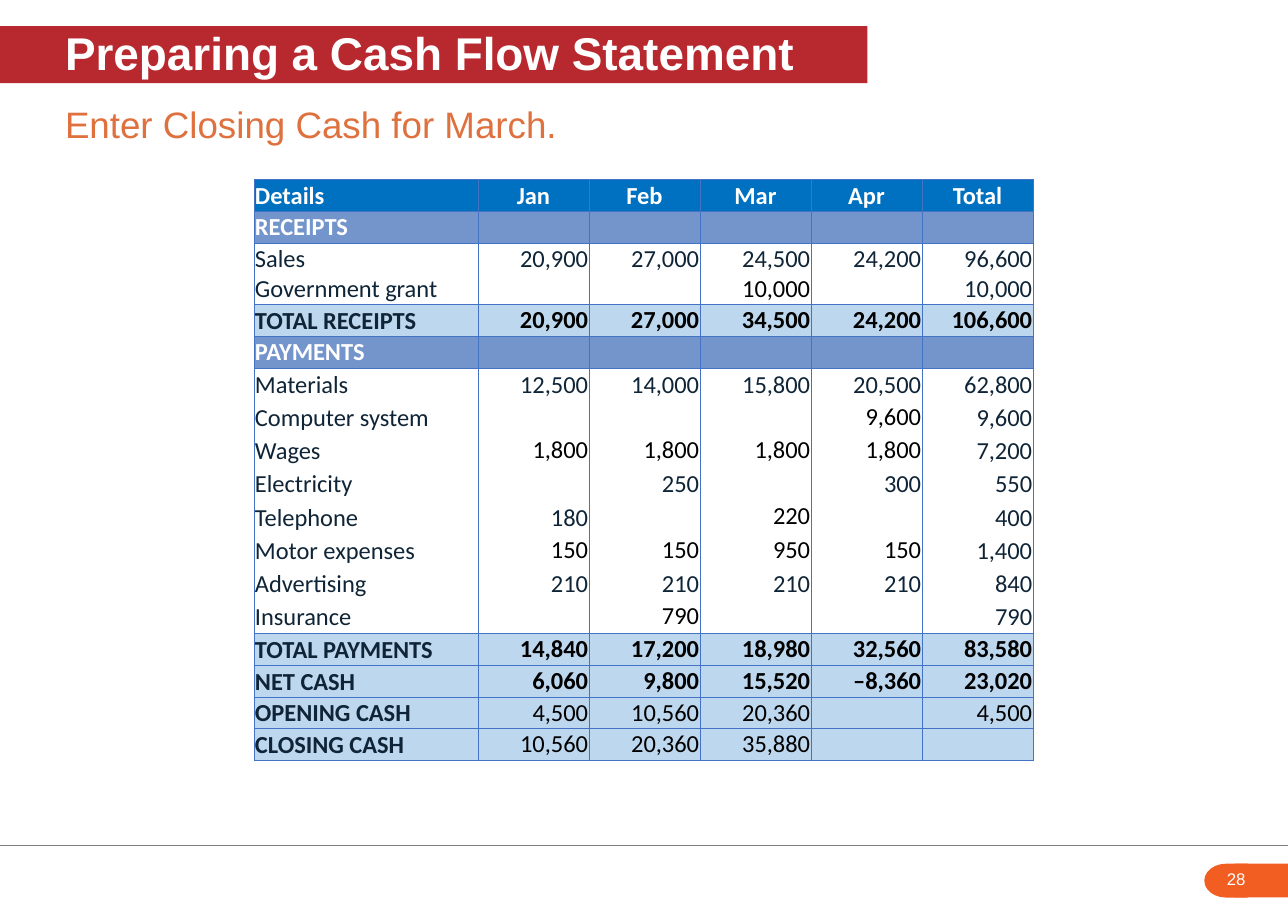
from lxml import etree
from pptx import Presentation
from pptx.dml.color import RGBColor
from pptx.enum.shapes import MSO_CONNECTOR, MSO_SHAPE
from pptx.enum.text import MSO_ANCHOR, MSO_AUTO_SIZE, PP_ALIGN
from pptx.oxml.ns import qn
from pptx.util import Cm, Pt

LEFT, CENTER, RIGHT = PP_ALIGN.LEFT, PP_ALIGN.CENTER, PP_ALIGN.RIGHT
TOP, MIDDLE = MSO_ANCHOR.TOP, MSO_ANCHOR.MIDDLE
STRAIGHT = MSO_CONNECTOR.STRAIGHT
RECTANGLE, DELAY = MSO_SHAPE.RECTANGLE, MSO_SHAPE.FLOWCHART_DELAY
NO_AUTOFIT = MSO_AUTO_SIZE.NONE

COLORS = {
    "white": "FFFFFF",
    "black": "000000",
    "navy": "0F2537",
    "red": "B8292F",
    "orange": "DF713E",
    "badge": "F25E22",
    "rule": "808080",
    "border": "4472C4",
    "header": "0070C0",
    "section": "7395CB",
    "total": "BDD7EE",
}
FILLS = {"header": "header", "section": "section", "receipt": "white",
         "payment": "white", "total": "total", "balance": "total"}
ROW_HEIGHTS = {"receipt": 0.71, "payment": 0.766}
ITEMS = ("receipt", "payment")
MONTHS = (1, 2, 3, 4)

# Each row: kind, label, values, columns whose figures are black and top-aligned
ROWS = [
    ("header", "Details", ["Jan", "Feb", "Mar", "Apr", "Total"], ()),
    ("section", "RECEIPTS", [""] * 5, ()),
    ("receipt", "Sales", ["20,900", "27,000", "24,500", "24,200", "96,600"], ()),
    ("receipt", "Government grant", ["", "", "10,000", "", "10,000"], (3,)),
    ("total", "TOTAL RECEIPTS", ["20,900", "27,000", "34,500", "24,200", "106,600"], ()),
    ("section", "PAYMENTS", [""] * 5, ()),
    ("payment", "Materials", ["12,500", "14,000", "15,800", "20,500", "62,800"], ()),
    ("payment", "Computer system", ["", "", "", "9,600", "9,600"], (4,)),
    ("payment", "Wages", ["1,800", "1,800", "1,800", "1,800", "7,200"], MONTHS),
    ("payment", "Electricity", ["", "250", "", "300", "550"], ()),
    ("payment", "Telephone", ["180", "", "220", "", "400"], (3,)),
    ("payment", "Motor expenses", ["150", "150", "950", "150", "1,400"], MONTHS),
    ("payment", "Advertising", ["210", "210", "210", "210", "840"], ()),
    ("payment", "Insurance", ["", "790", "", "", "790"], (2,)),
    ("total", "TOTAL PAYMENTS", ["14,840", "17,200", "18,980", "32,560", "83,580"], ()),
    ("total", "NET CASH", ["6,060", "9,800", "15,520", "–8,360", "23,020"], ()),
    ("balance", "OPENING CASH", ["4,500", "10,560", "20,360", "", "4,500"], ()),
    ("balance", "CLOSING CASH", ["10,560", "20,360", "35,880", "", ""], ()),
]


def color(name):
    """Return the named colour."""
    return RGBColor.from_string(COLORS[name])


def write(frame, text, size=16, font="Arial", fill="white", bold=False, align=LEFT):
    """Put one formatted paragraph in a text frame."""
    paragraph = frame.paragraphs[0]
    paragraph.alignment = align
    if not text:
        etree.SubElement(paragraph._p, qn("a:endParaRPr"), sz=str(size * 100))
        return
    run = paragraph.add_run()
    run.text = text
    run.font.size = Pt(size)
    run.font.name = font
    run.font.bold = bold
    run.font.color.rgb = color(fill)


def set_heading_frame(frame):
    """Give a heading its margins and middle anchor."""
    frame.auto_size = NO_AUTOFIT
    frame.word_wrap = True
    frame.vertical_anchor = MIDDLE
    frame.margin_left, frame.margin_top = Cm(1.5), 0
    frame.margin_right, frame.margin_bottom = 0, Cm(0.13)


def add_headings(slide, left, top, width):
    """Place the title band and the instruction below it."""
    title = slide.shapes.title
    title.left, title.top, title.width, title.height = left, top, Cm(20), Cm(1.32)
    title.fill.solid()
    title.fill.fore_color.rgb = color("red")
    set_heading_frame(title.text_frame)
    write(title.text_frame, "Preparing a Cash Flow Statement", size=30, bold=True)

    instruction = slide.shapes.add_textbox(left, top + Cm(1.66), width, Cm(1.3))
    set_heading_frame(instruction.text_frame)
    write(instruction.text_frame, "Enter Closing Cash for March.", size=24, fill="orange")


def set_borders(cell, sides):
    """Draw the given cell sides and hide the others."""
    properties = cell._tc.get_or_add_tcPr()
    for side in "LRTB":
        line = etree.SubElement(properties, qn(f"a:ln{side}"), w=str(Pt(0.5)))
        if side in sides:
            solid = etree.SubElement(line, qn("a:solidFill"))
            etree.SubElement(solid, qn("a:srgbClr"), val=COLORS["border"])
        else:
            etree.SubElement(line, qn("a:noFill"))


def cell_format(kind, column, black_columns):
    """Return the text format and anchor for one cell."""
    if kind in ("header", "section"):
        align = CENTER if column else LEFT
        return {"fill": "white", "bold": True, "align": align}, MIDDLE
    align = RIGHT if column else LEFT
    if kind in ITEMS:
        black = column in black_columns
        bold = False
    else:
        black = column > 0
        bold = kind == "total" or column == 0
    text_format = {"fill": "black" if black else "navy", "bold": bold, "align": align}
    return text_format, TOP if black else MIDDLE


def add_cash_flow_table(slide, left, top, label_width, value_width):
    """Build the cash flow table from its rows."""
    columns = 1 + len(ROWS[0][2])
    heights = [Cm(ROW_HEIGHTS.get(row[0], 0.73)) for row in ROWS]
    width = label_width + value_width * (columns - 1)
    table = slide.shapes.add_table(len(ROWS), columns, left, top, width, sum(heights)).table
    table.first_row = table.horz_banding = False
    for index, column in enumerate(table.columns):
        column.width = value_width if index else label_width

    kinds = [row[0] for row in ROWS]
    for index, (kind, label, values, black_columns) in enumerate(ROWS):
        table.rows[index].height = heights[index]
        sides = "LR"
        if kind not in ITEMS or kinds[index - 1] != kind:
            sides += "T"
        if kind not in ITEMS or kinds[index + 1] != kind:
            sides += "B"
        for column, text in enumerate([label, *values]):
            cell = table.cell(index, column)
            set_borders(cell, sides)
            cell.fill.solid()
            cell.fill.fore_color.rgb = color(FILLS[kind])
            cell.margin_left = cell.margin_right = cell.margin_top = Cm(0.02)
            cell.margin_bottom = 0
            text_format, cell.vertical_anchor = cell_format(kind, column, black_columns)
            write(cell.text_frame, text, font="Calibri", **text_format)


def add_footer(slide, left, top, width):
    """Place the rule and the page number badge at the right edge."""
    rule = slide.shapes.add_connector(STRAIGHT, left, top, left + width, top)
    rule.line.color.rgb = color("rule")
    rule.line.width = Pt(0.75)
    etree.SubElement(rule._element.spPr, qn("a:effectLst"))

    right, badge_top = left + width, top + Cm(0.41)
    for kind, offset, part_width, rotation in (
        (DELAY, 1.93, 1, 180),
        (RECTANGLE, 1.23, 1.23, 0),
    ):
        part = slide.shapes.add_shape(
            kind, right - Cm(offset), badge_top, Cm(part_width), Cm(0.78))
        part.rotation = rotation
        part.shadow.inherit = False
        part.fill.solid()
        part.fill.fore_color.rgb = color("badge")
        part.line.fill.background()

    number = slide.shapes.add_textbox(right - Cm(1.66), badge_top, Cm(1.42), Cm(0.72))
    number.text_frame.word_wrap = True
    write(number.text_frame, "28", size=11)


def main():
    """Build and save the slide."""
    presentation = Presentation()
    presentation.slide_width, presentation.slide_height = Cm(29.7), Cm(21)
    slide = presentation.slides.add_slide(presentation.slide_layouts[5])
    width = presentation.slide_width
    add_footer(slide, 0, Cm(19.5), width)
    add_headings(slide, 0, Cm(0.6), width)
    add_cash_flow_table(slide, Cm(5.86), Cm(4.14), Cm(5.16), Cm(2.56))
    presentation.save("out.pptx")


if __name__ == "__main__":
    main()
